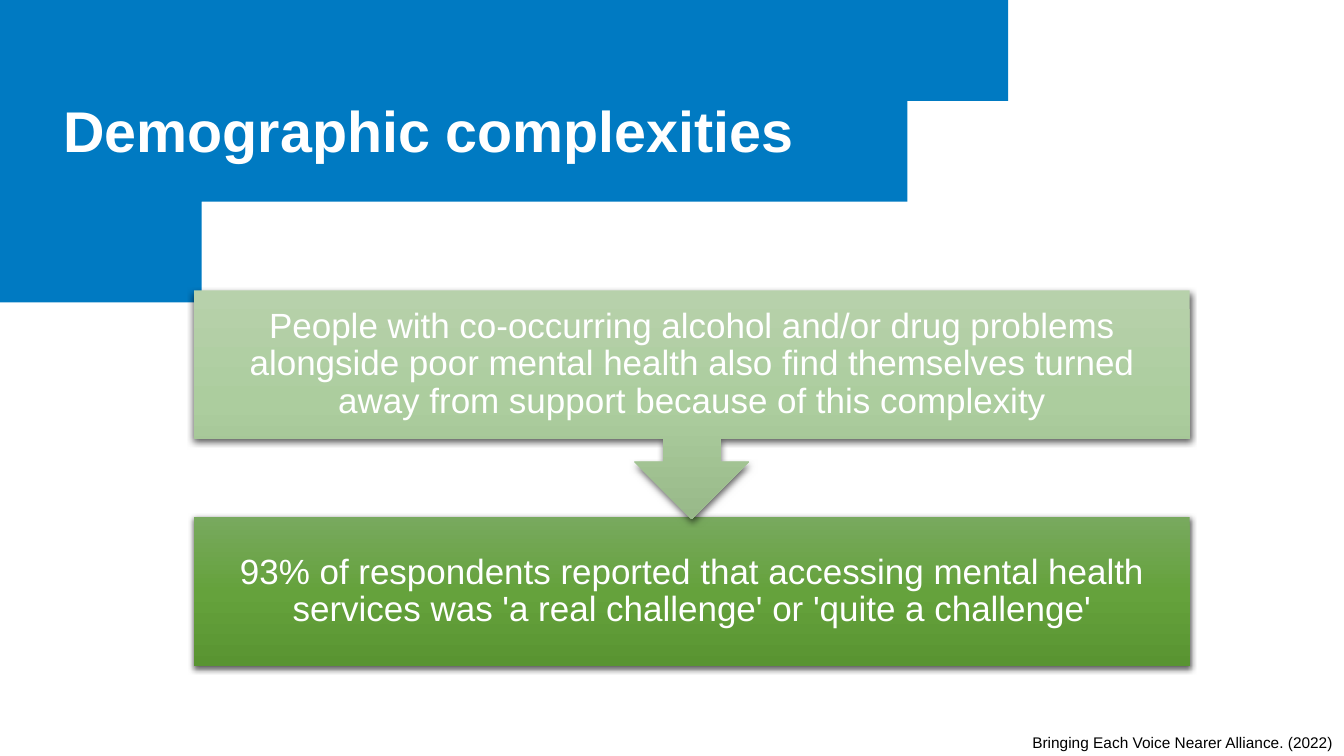
from dataclasses import dataclass
from typing import Any

import pptx
import pptx.dml.color
import pptx.enum.shapes
import pptx.enum.text
import pptx.oxml
import pptx.oxml.ns
import pptx.util

Inches = pptx.util.Inches
Shape = pptx.enum.shapes.MSO_SHAPE
Align = pptx.enum.text.PP_ALIGN
Anchor = pptx.enum.text.MSO_ANCHOR
Point = tuple[float, float]


@dataclass(frozen=True)
class Theme:
    font: str = "Arial"
    wave: str = "007AC2"
    light: str = "FFFFFF"
    dark: str = "000000"
    pale_green: tuple[str, ...] = ("B7D1AB", "ACCD9E", "98B989")
    deep_green: tuple[str, ...] = ("78A95E", "65A23C", "599431")
    title_size: float = 41
    step_size: float = 25
    credit_size: float = 11


@dataclass(frozen=True)
class Step:
    text: str
    kind: Any
    top: float
    height: float
    colours: tuple[str, ...]


@dataclass(frozen=True)
class Label:
    text: str
    frame: tuple[float, float, float, float]
    size: float
    colour: str
    bold: bool
    inset: tuple[float, float, float, float]
    anchor: Any


THEME = Theme()
STEP_LEFT, STEP_WIDTH = 1.92, 9.88
SAMPLES = 24

STEPS = (
    Step("93% of respondents reported that accessing mental health services was "
         "'a real challenge' or 'quite a challenge'",
         Shape.RECTANGLE, 5.13, 1.48, THEME.deep_green),
    Step("People with co-occurring alcohol and/or drug problems alongside poor mental "
         "health also find themselves turned away from support because of this complexity",
         Shape.DOWN_ARROW_CALLOUT, 2.88, 2.27, THEME.pale_green),
)

LABELS = (
    Label("Demographic complexities", (0.63, 0.7, 8.15, 1.26), THEME.title_size,
          THEME.light, True, (0, 0, 0, 0), Anchor.MIDDLE),
    Label("Bringing Each Voice Nearer Alliance. (2022)", (10.14, 6.94, 3.19, 0.56),
          THEME.credit_size, THEME.dark, False, (0.1, 0.05, 0, 0.04), Anchor.BOTTOM),
)

# Wave edge: cubic curves, each continuing from the previous end point
WAVE_START: Point = (0.97, 2.65)
WAVE_CURVES: tuple[tuple[Point, Point, Point], ...] = (
    ((1.8, 2.43), (2.6, 2.33), (3.45, 2.33)),
    ((4.64, 2.33), (5.83, 2.46), (7.02, 2.33)),
    ((8.67, 2.1), (9.71, 1.46), (9.71, 0.21)),
)


def rgb(colour: str) -> pptx.dml.color.RGBColor:
    return pptx.dml.color.RGBColor.from_string(colour)


def apply(target: Any, values: dict[str, Any]) -> None:
    for name, value in values.items():
        setattr(target, name, value)


def curve_points(start: Point, first: Point, second: Point, end: Point) -> list[Point]:
    points = []
    for index in range(1, SAMPLES + 1):
        t = index / SAMPLES
        weights = ((1 - t) ** 3, 3 * t * (1 - t) ** 2, 3 * t * t * (1 - t), t ** 3)
        controls = (start, first, second, end)
        points.append((sum(w * c[0] for w, c in zip(weights, controls)),
                       sum(w * c[1] for w, c in zip(weights, controls))))
    return points


def write_text(shape: Any, text: str, size: float, colour: str, bold: bool,
               inset: tuple[float, float, float, float], anchor: Any, align: Any) -> None:
    frame = shape.text_frame
    sides = ("margin_left", "margin_top", "margin_right", "margin_bottom")
    apply(frame, {"word_wrap": True, "vertical_anchor": anchor,
                  **{side: Inches(value) for side, value in zip(sides, inset)}})
    para = frame.paragraphs[0]
    apply(para, {"alignment": align, "line_spacing": 0.9})
    span = para.add_run()
    span.text = text
    apply(span.font, {"name": THEME.font, "size": pptx.util.Pt(size), "bold": bold})
    span.font.color.rgb = rgb(colour)


def draw_wave(page: Any) -> None:
    points = [(0, 0), (0, 2.91), WAVE_START]
    for curve in WAVE_CURVES:
        points += curve_points(points[-1], *curve)
    points.append((9.7, 0))
    builder = page.shapes.build_freeform(0, 0, scale=Inches(1))
    builder.add_line_segments(points, close=True)
    wave = builder.convert_to_shape()
    wave.shadow.inherit = False
    wave.fill.solid()
    wave.fill.fore_color.rgb = rgb(THEME.wave)
    wave.line.fill.background()


def draw_step(page: Any, step: Step) -> None:
    box = page.shapes.add_shape(step.kind, Inches(STEP_LEFT), Inches(step.top),
                                Inches(STEP_WIDTH), Inches(step.height))
    box.line.fill.background()
    box.shadow.inherit = False

    # Three-stop vertical gradient and soft shadow
    namespace = pptx.oxml.ns.nsdecls("a")
    stops = "".join(f'<a:gs pos="{index * 50000}"><a:srgbClr val="{colour}"/></a:gs>'
                    for index, colour in enumerate(step.colours))
    gradient = pptx.oxml.parse_xml(
        f'<a:gradFill {namespace} rotWithShape="1"><a:gsLst>{stops}</a:gsLst>'
        '<a:lin ang="5400000" scaled="0"/></a:gradFill>')
    shadow = pptx.oxml.parse_xml(
        f'<a:outerShdw {namespace} blurRad="57150" dist="19050" dir="5400000" '
        f'algn="ctr" rotWithShape="0"><a:srgbClr val="{THEME.dark}">'
        '<a:alpha val="63000"/></a:srgbClr></a:outerShdw>')
    properties = box._element.spPr
    properties.find(pptx.oxml.ns.qn("a:prstGeom")).addnext(gradient)
    properties.find(pptx.oxml.ns.qn("a:effectLst")).append(shadow)

    write_text(box, step.text, THEME.step_size, THEME.light, False,
               (0.19,) * 4, Anchor.MIDDLE, Align.CENTER)


def draw_label(page: Any, label: Label) -> None:
    box = page.shapes.add_textbox(*(Inches(value) for value in label.frame))
    write_text(box, label.text, label.size, label.colour, label.bold,
               label.inset, label.anchor, Align.LEFT)


def main() -> None:
    deck = pptx.Presentation()
    apply(deck, {"slide_width": Inches(13.33), "slide_height": Inches(7.5)})
    page = deck.slides.add_slide(deck.slide_layouts[6])
    draw_wave(page)
    for step in STEPS:
        draw_step(page, step)
    for label in LABELS:
        draw_label(page, label)
    deck.save("out.pptx")


if __name__ == "__main__":
    main()
